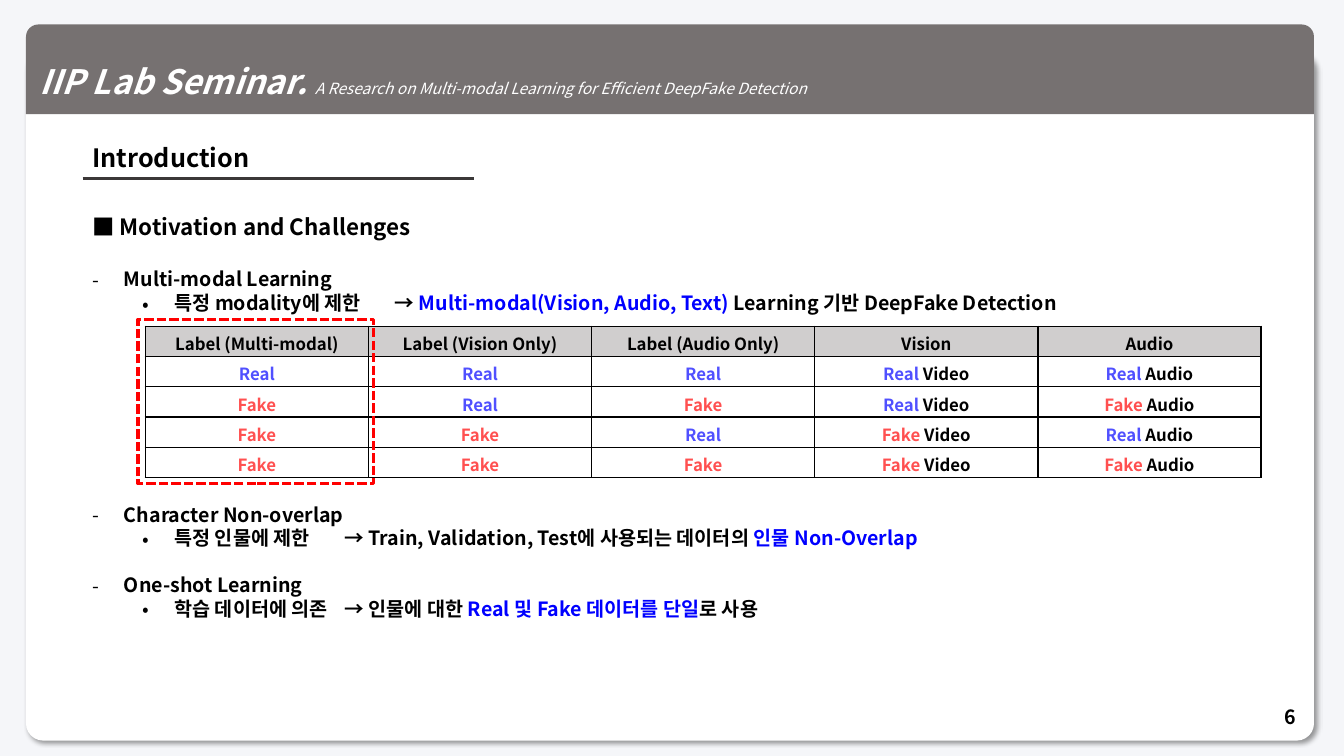
"""Build the seminar slide on motivation and challenges."""
from lxml import etree
from pptx import Presentation
from pptx.dml.color import RGBColor
from pptx.enum.dml import MSO_LINE
from pptx.enum.shapes import MSO_CONNECTOR, MSO_SHAPE
from pptx.enum.text import MSO_ANCHOR, PP_ALIGN
from pptx.oxml.ns import qn
from pptx.util import Pt

ROUND, TOP_ROUND, RECT = (MSO_SHAPE.ROUNDED_RECTANGLE,
                          MSO_SHAPE.ROUND_2_SAME_RECTANGLE, MSO_SHAPE.RECTANGLE)
LINE, DASH = MSO_CONNECTOR.STRAIGHT, MSO_LINE.SQUARE_DOT
TOP, MIDDLE = MSO_ANCHOR.TOP, MSO_ANCHOR.MIDDLE
LEFT, MID, RIGHT = PP_ALIGN.LEFT, PP_ALIGN.CENTER, PP_ALIGN.RIGHT
FONT = "Noto Sans CJK KR"
BLACK, WHITE, BLUE, GRAY = "000000", "FFFFFF", "0000FF", "D0CECE"
TINT = {"Real": "5050FF", "Fake": "FF5050"}

BANNER = [("IIP Lab Seminar. ", WHITE),
          ("A Research on Multi-modal Learning for Efficient DeepFake Detection", WHITE)]
TOPICS = [
    ("Multi-modal Learning", 19.2,
     [("특정 modality에 제한\t→ ", BLACK), ("Multi-modal(Vision, Audio, Text)", BLUE),
      (" Learning 기반 DeepFake Detection", BLACK)]),
    ("Character Non-overlap", 134.4,
     [("특정 인물에 제한\t→ Train, Validation, Test에 사용되는 데이터의 ", BLACK),
      ("인물 Non-Overlap", BLUE)]),
    ("One-shot Learning", 16.8,
     [("학습 데이터에 의존\t→ 인물에 대한 ", BLACK),
      ("Real 및 Fake 데이터를 단일", BLUE), ("로 사용", BLACK)]),
]
HEADS = ["Label (Multi-modal)", "Label (Vision Only)", "Label (Audio Only)",
         "Vision", "Audio"]
LABELS = ["Real Real Real Real Real", "Fake Real Fake Real Fake",
          "Fake Fake Real Fake Real", "Fake Fake Fake Fake Fake"]
TAILS = ["", "", "", " Video", " Audio"]


def color(code):
    return RGBColor.from_string(code)


def write(para, parts, size, align=LEFT):
    para.alignment = align
    for words, code in parts:
        run = para.add_run()
        run.text = words
        font = run.font
        font.name, font.size, font.bold = FONT, Pt(size), True
        font.color.rgb = color(code)
        east = etree.SubElement(font._element, qn("a:ea"))
        east.set("typeface", FONT)


def bullet(para, mark, left):
    props = para._p.get_or_add_pPr()
    props.set("marL", str(Pt(left)))
    props.set("indent", str(Pt(-22.5)))
    face = etree.SubElement(props, qn("a:buFont"))
    face.set("typeface", FONT)
    etree.SubElement(props, qn("a:buChar")).set("char", mark)


def block(kind, left, top, width, height, fill):
    shape = slide.shapes.add_shape(kind, Pt(left), Pt(top), Pt(width), Pt(height))
    shape.shadow.inherit = False
    shape.line.fill.background()
    if fill:
        shape.fill.solid()
        shape.fill.fore_color.rgb = color(fill)
    else:
        shape.fill.background()
    return shape


def label(left, top, width, height, anchor=TOP):
    frame = slide.shapes.add_textbox(Pt(left), Pt(top), Pt(width), Pt(height)).text_frame
    frame.word_wrap = True
    frame.vertical_anchor = anchor
    return frame


def cast(shape):
    list_ = shape._element.spPr.find(qn("a:effectLst"))
    outer = etree.SubElement(list_, qn("a:outerShdw"), blurRad=str(Pt(4)),
                             dist=str(Pt(3)), dir="2700000", algn="tl", rotWithShape="0")
    tone = etree.SubElement(outer, qn("a:srgbClr"), val=BLACK)
    etree.SubElement(tone, qn("a:alpha"), val="40000")


def border(cell):
    props = cell._tc.get_or_add_tcPr()
    for spot, side in enumerate(("lnL", "lnR", "lnT", "lnB")):
        edge = etree.Element(qn("a:" + side), w=str(Pt(1)))
        fill = etree.SubElement(edge, qn("a:solidFill"))
        etree.SubElement(fill, qn("a:srgbClr"), val=BLACK)
        props.insert(spot, edge)


deck = Presentation()
deck.slide_width, deck.slide_height = Pt(960), Pt(540)
slide = deck.slides.add_slide(deck.slide_layouts[6])
slide.background.fill.solid()
slide.background.fill.fore_color.rgb = color("F5F6F9")

card = block(ROUND, 18.6, 37.4, 920, 491.6, WHITE)
card.adjustments[0] = 0.025
cast(card)
bar = block(TOP_ROUND, 18.6, 17.5, 920, 64, "767171")
bar.adjustments[0], bar.adjustments[1] = 0.137, 0
bar.text_frame.vertical_anchor = MIDDLE
title = bar.text_frame.paragraphs[0]
title.line_spacing = 1.5
write(title, BANNER, 24)
for run in title.runs:
    run.font.italic = True
title.runs[1].font.size, title.runs[1].font.bold = Pt(11), False

write(label(59, 98.4, 842, 29).paragraphs[0], [("Introduction", BLACK)], 18)
rule = slide.shapes.add_connector(LINE, Pt(59), Pt(127.5), Pt(338.8), Pt(127.5))
rule.line.color.rgb, rule.line.width = color("3B3838"), Pt(2.25)
etree.SubElement(rule._element.spPr, qn("a:effectLst"))
write(label(717, 497.6, 216, 29, MIDDLE).paragraphs[0], [("6", BLACK)], 14, RIGHT)

body = label(59, 149, 842, 300)
head = body.paragraphs[0]
head.line_spacing = Pt(19.2)
write(head, [("■ Motivation and Challenges", BLACK)], 16)
for topic, gap, parts in TOPICS:
    rows = [("-", 22.5, gap, [(topic, BLACK)]), ("•", 58.5, 0, parts)]
    for mark, left, space, words in rows:
        para = body.add_paragraph()
        para.line_spacing, para.space_before = Pt(16.8), Pt(space)
        bullet(para, mark, left)
        write(para, words, 14)

grid = [[[(name, BLACK)] for name in HEADS]]
for line in LABELS:
    grid.append([[(word, TINT[word])] + ([(tail, BLACK)] if tail else [])
                 for word, tail in zip(line.split(), TAILS)])
table = slide.shapes.add_table(len(grid), len(HEADS), Pt(103.8), Pt(233),
                               Pt(797), Pt(108)).table
for col in table.columns:
    col.width = Pt(159.4)
for r, row in enumerate(grid):
    table.rows[r].height = Pt(21.6)
    for c, parts in enumerate(row):
        cell = table.cell(r, c)
        cell.margin_top, cell.margin_bottom = Pt(3.6), Pt(0)
        cell.fill.solid()
        cell.fill.fore_color.rgb = color(WHITE if r else GRAY)
        border(cell)
        write(cell.text_frame.paragraphs[0], parts, 12, MID)

frame = block(RECT, 98.6, 228.2, 168.5, 117.4, None)
frame.line.color.rgb, frame.line.width = color("FF0000"), Pt(2.25)
frame.line.dash_style = DASH
deck.save("out.pptx")
